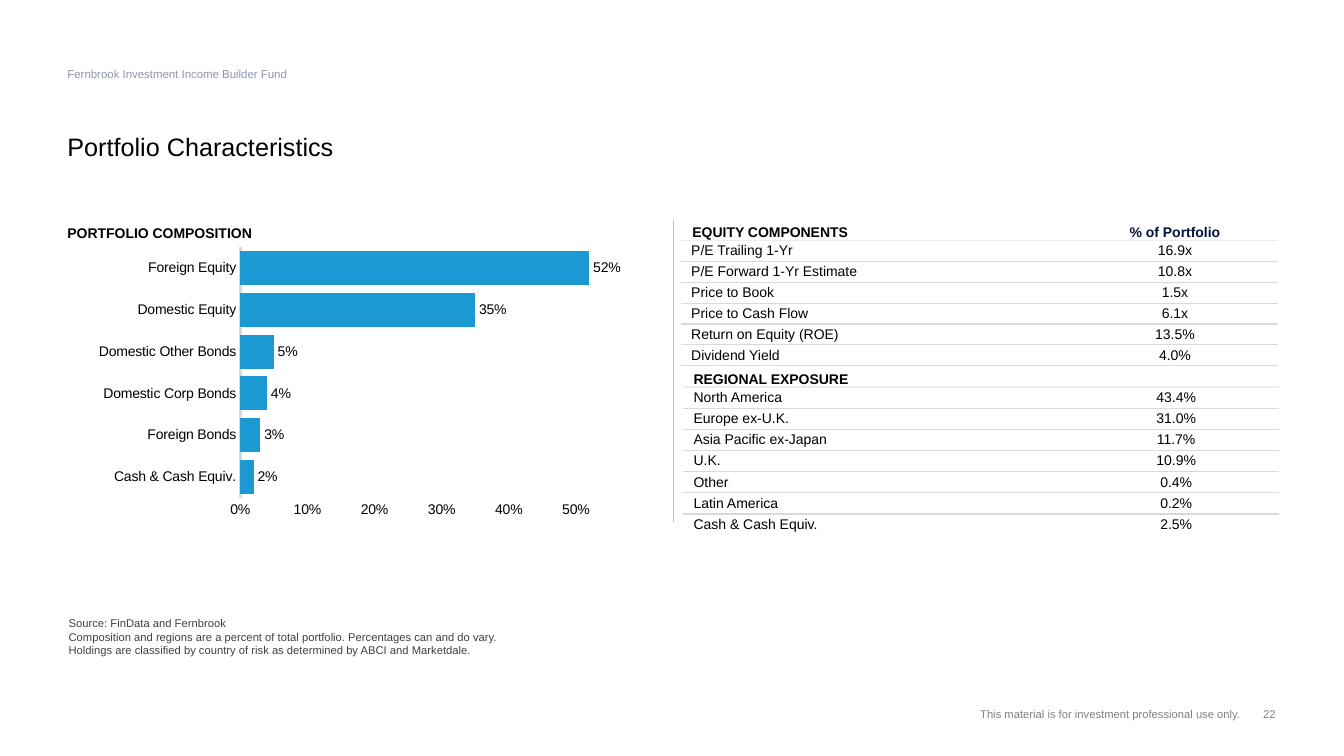
from lxml import etree
from pptx import Presentation
from pptx.chart.data import CategoryChartData
from pptx.dml.color import RGBColor
from pptx.enum.chart import XL_CHART_TYPE, XL_LABEL_POSITION, XL_TICK_MARK
from pptx.enum.shapes import MSO_CONNECTOR
from pptx.enum.text import MSO_ANCHOR, MSO_AUTO_SIZE, PP_ALIGN
from pptx.oxml import parse_xml
from pptx.oxml.ns import nsdecls, qn
from pptx.util import Cm, Pt

BAR_CLUSTERED = XL_CHART_TYPE.BAR_CLUSTERED
OUTSIDE_END = XL_LABEL_POSITION.OUTSIDE_END
NO_TICK = XL_TICK_MARK.NONE
STRAIGHT = MSO_CONNECTOR.STRAIGHT
TOP, MIDDLE, BOTTOM = MSO_ANCHOR.TOP, MSO_ANCHOR.MIDDLE, MSO_ANCHOR.BOTTOM
LEFT, CENTER, RIGHT = PP_ALIGN.LEFT, PP_ALIGN.CENTER, PP_ALIGN.RIGHT
NO_AUTOFIT = MSO_AUTO_SIZE.NONE
BLACK = "000000"
NO_STYLE = "{2D5ABB26-0587-4C30-8999-92F81FD0307C}"


def format_font(font, size, color, bold=False):
    font.name = "Arial"
    font.size = Pt(size)
    font.bold = bold
    font.color.rgb = RGBColor.from_string(color)


def place_text(shape, box, text, size, color, bold=False, anchor=TOP, align=LEFT, inset=0):
    shape.left, shape.top, shape.width, shape.height = [Cm(length) for length in box]
    frame = shape.text_frame
    frame.text = text
    frame.word_wrap = True
    frame.auto_size = NO_AUTOFIT
    frame.vertical_anchor = anchor
    frame.margin_left = frame.margin_right = 0
    frame.margin_top = frame.margin_bottom = Cm(inset)
    for paragraph in frame.paragraphs:
        properties = paragraph._p.get_or_add_pPr()
        properties.set("marL", "0")
        properties.set("indent", "0")
        etree.SubElement(properties, qn("a:buNone"))
        paragraph.alignment = align
        paragraph.space_before = Pt(0)
        for run in paragraph.runs:
            format_font(run.font, size, color, bold)


presentation = Presentation()
presentation.slide_width = Cm(33.87)
presentation.slide_height = Cm(19.05)
slide = presentation.slides.add_slide(presentation.slide_layouts[3])
shapes = slide.shapes
title, fund_name, source_note = slide.placeholders

divider = shapes.add_connector(STRAIGHT, Cm(16.97), Cm(5.54), Cm(16.97), Cm(13.16))
divider.line.color.rgb = RGBColor.from_string("BFBFBF")
divider.line.width = Pt(0.5)
etree.SubElement(divider._element.spPr, qn("a:effectLst"))

place_text(title, (1.7, 3.38, 23.72, 0.69), "Portfolio Characteristics", 18, BLACK, anchor=BOTTOM)
title.text_frame.paragraphs[0].line_spacing = 0.9
place_text(fund_name, (1.7, 1.7, 10.16, 0.36),
           "Fernbrook Investment Income Builder Fund", 8.2, "9096AC")
place_text(
    source_note, (1.73, 15.54, 29.36, 1.0),
    "Source: FinData and Fernbrook\n"
    "Composition and regions are a percent of total portfolio. Percentages can and do vary.\v"
    "Holdings are classified by country of risk as determined by ABCI and Marketdale.",
    8, "404040")

text_boxes = [
    ((16.94, 17.65, 14.33, 0.51), "This material is for investment professional use only.",
     8, "808080", False, BOTTOM, RIGHT, 0),
    ((31.24, 17.65, 0.91, 0.51), "22", 8, "808080", False, BOTTOM, RIGHT, 0),
    ((1.7, 5.54, 14.5, 0.69), "PORTFOLIO COMPOSITION", 10, BLACK, True, TOP, LEFT, 0.13),
]
for box, *settings in text_boxes:
    place_text(shapes.add_textbox(0, 0, 0, 0), box, *settings)

composition = CategoryChartData(number_format="0%")
composition.categories = ["Cash & Cash Equiv.", "Foreign Bonds", "Domestic Corp Bonds",
                          "Domestic Other Bonds", "Domestic Equity", "Foreign Equity"]
composition.add_series("Series 1", [0.02, 0.03, 0.04, 0.05, 0.35, 0.52])
chart = shapes.add_chart(BAR_CLUSTERED, Cm(1.7), Cm(5.54), Cm(15.01), Cm(7.7), composition).chart
format_font(chart.font, 10, BLACK)
chart.has_legend = False
chart.has_title = False

category_axis = chart.category_axis
category_axis.major_tick_mark = NO_TICK
category_axis.format.line.color.rgb = RGBColor.from_string("D2D9E0")
category_axis.format.line.width = Pt(2)

value_axis = chart.value_axis
value_axis.has_major_gridlines = False
value_axis.major_tick_mark = NO_TICK
value_axis.minimum_scale, value_axis.maximum_scale, value_axis.major_unit = 0, 0.55, 0.1
value_axis.tick_labels.number_format = "0%"
value_axis.tick_labels.number_format_is_linked = False
value_axis.format.line.fill.background()

plot = chart.plots[0]
plot.gap_width = 23
plot.vary_by_categories = False
bars = plot.series[0].format.fill
bars.solid()
bars.fore_color.rgb = RGBColor.from_string("1A99D2")
plot.has_data_labels = True
labels = plot.data_labels
labels.show_value = True
labels.position = OUTSIDE_END
labels.number_format = "0%"
labels.number_format_is_linked = False
format_font(labels.font, 10, BLACK)

plot_area = chart._chartSpace.chart.plotArea
for old_layout in plot_area.findall(qn("c:layout")):
    plot_area.remove(old_layout)
plot_area.insert(0, parse_xml(
    f'<c:layout {nsdecls("c")}><c:manualLayout><c:layoutTarget val="inner"/>'
    '<c:xMode val="edge"/><c:yMode val="edge"/><c:x val="0.29"/><c:y val="0.09"/>'
    '<c:w val="0.62"/><c:h val="0.82"/></c:manualLayout></c:layout>'))

equity_rows = [
    ("EQUITY COMPONENTS", "% of Portfolio"),
    ("P/E Trailing 1-Yr", "16.9x"),
    ("P/E Forward 1-Yr Estimate", "10.8x"),
    ("Price to Book", "1.5x"),
    ("Price to Cash Flow", "6.1x"),
    ("Return on Equity (ROE)", "13.5%"),
    ("Dividend Yield", "4.0%"),
]
region_rows = [
    ("REGIONAL EXPOSURE", ""),
    ("North America", "43.4%"),
    ("Europe ex-U.K.", "31.0%"),
    ("Asia Pacific ex-Japan", "11.7%"),
    ("U.K.", "10.9%"),
    ("Other", "0.4%"),
    ("Latin America", "0.2%"),
    ("Cash & Cash Equiv.", "2.5%"),
]
for rows, left, top, height, indent in [
    (equity_rows, 17.17, 5.54, 3.68, 0.25),
    (region_rows, 17.2, 9.22, 4.27, 0.28),
]:
    table = shapes.add_table(len(rows), 2, Cm(left), Cm(top), Cm(15.03), Cm(height)).table
    table.first_row = table.horz_banding = False
    table._tbl.tblPr.find(qn("a:tableStyleId")).text = NO_STYLE
    table.columns[0].width = Cm(9.85)
    table.columns[1].width = Cm(5.18)
    for row_index, values in enumerate(rows):
        is_header = row_index == 0
        for column_index, value in enumerate(values):
            cell = table.cell(row_index, column_index)
            cell.text = value
            cell.vertical_anchor = BOTTOM if is_header else MIDDLE
            cell.margin_left = Cm(0 if column_index else 0.28 if is_header else indent)
            cell.margin_right = cell.margin_top = cell.margin_bottom = 0
            paragraph = cell.text_frame.paragraphs[0]
            paragraph.alignment = CENTER if column_index else LEFT
            for run in paragraph.runs:
                format_font(run.font, 10, "00103F" if is_header and column_index else BLACK, is_header)
            if not value:
                etree.SubElement(paragraph._p, qn("a:endParaRPr"), sz="1000")
            if values != region_rows[-1]:
                border_color = "EBECF0" if is_header else "D9D9D9"
                cell._tc.get_or_add_tcPr().append(parse_xml(
                    f'<a:lnB {nsdecls("a")} w="12700"><a:solidFill>'
                    f'<a:srgbClr val="{border_color}"/></a:solidFill></a:lnB>'))
            cell.fill.background()

presentation.save("out.pptx")
